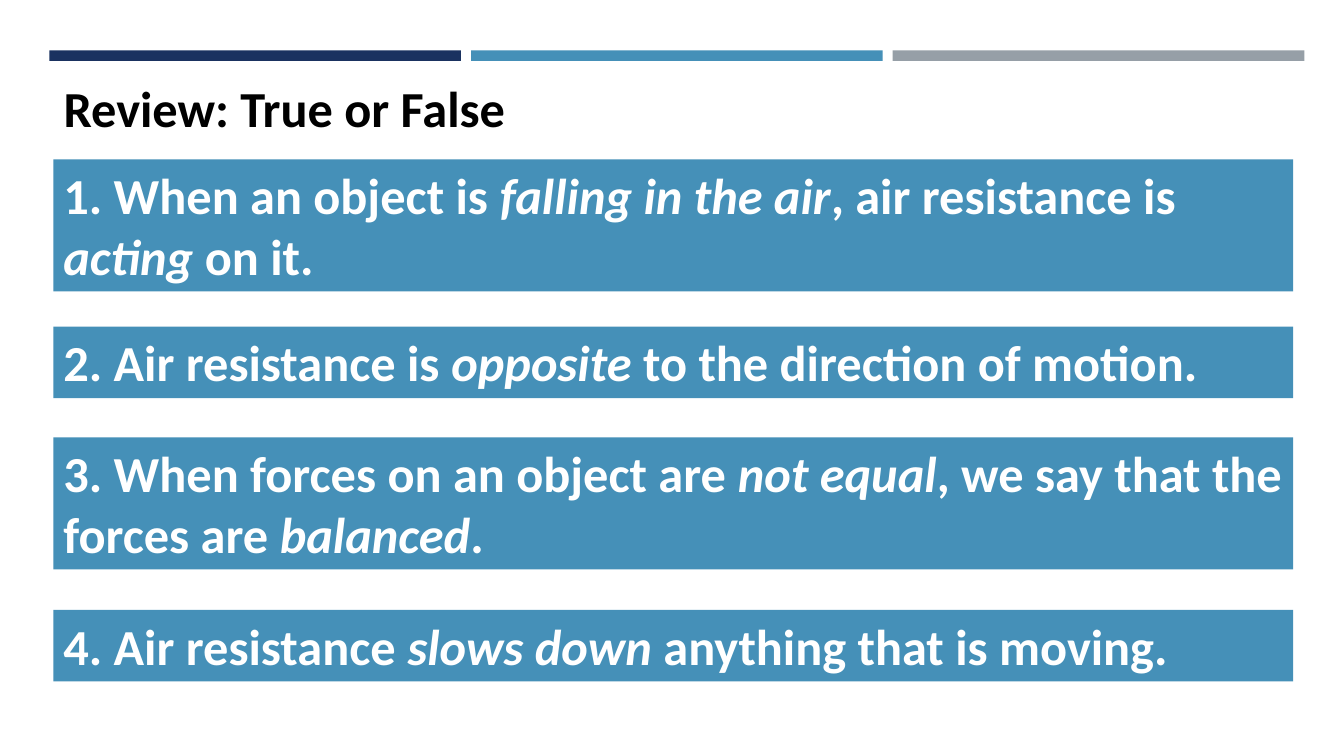
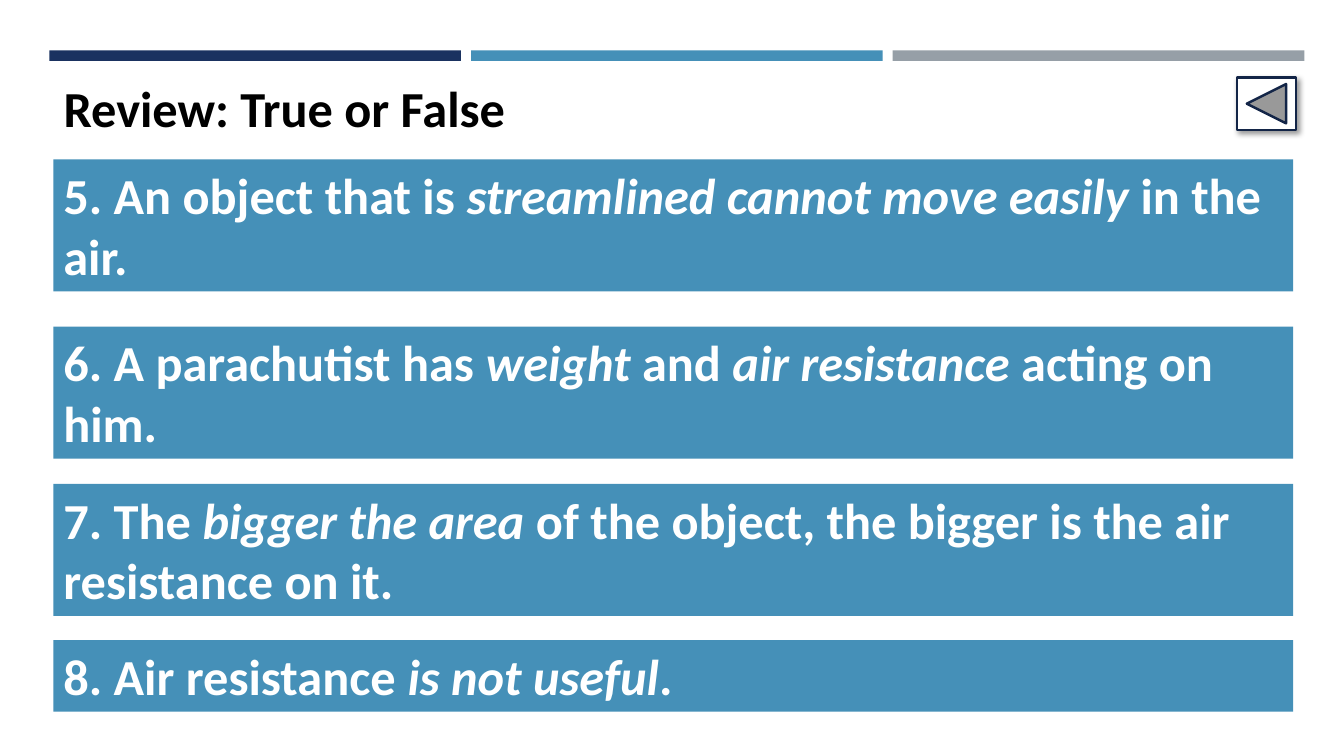
from lxml import etree
from pptx import Presentation
from pptx.dml.color import RGBColor
from pptx.enum.shapes import MSO_SHAPE
from pptx.enum.text import MSO_ANCHOR, MSO_AUTO_SIZE, PP_ALIGN
from pptx.oxml import parse_xml
from pptx.util import Pt

RECT = MSO_SHAPE.RECTANGLE
BACK = MSO_SHAPE.ACTION_BUTTON_BACK_OR_PREVIOUS
TOP, LEFT = MSO_ANCHOR.TOP, PP_ALIGN.LEFT
NO_FIT = MSO_AUTO_SIZE.NONE

# Shared look
NAVY, BLUE, GRAY = "1A3260", "4590B8", "969FA7"
WHITE, BLACK, OUTLINE = "FFFFFF", "000000", "132547"
FONT = {"name": "Calibri", "size": Pt(36), "bold": True}
FRAME = {"word_wrap": True, "auto_size": NO_FIT, "vertical_anchor": TOP,
         "margin_left": Pt(7.2), "margin_right": Pt(7.2),
         "margin_top": Pt(3.6), "margin_bottom": Pt(3.6)}

# Shared geometry, in points
SLIDE_W, SLIDE_H = 960, 540
BANDS_BOX = (35.3, 36, 896.4, 7.6)
BAND_GAP = 7.2
TITLE_BOX = (38.2, 51.8, 885.6, 51.1)
BUTTON_BOX = (883.4, 55.4, 42.5, 37.4)
LINE_H, STATEMENT_PAD = 43.2, 7.9

# Statements: top, number of lines, text with *emphasis*
TITLE = "Review: True or False"
REVIEWS = [
    {"back": False, "statements": [
        (113.8, 2, "1. When an object is *falling in the air*, air resistance is "
                   "*acting* on it."),
        (233.3, 1, "2. Air resistance is *opposite* to the direction of motion."),
        (312.5, 2, "3. When forces on an object are *not equal*, we say that the "
                   "forces are *balanced*."),
        (435.6, 1, "4. Air resistance *slows down *anything that is moving."),
    ]},
    {"back": True, "statements": [
        (113.8, 2, "5. An object that is *streamlined cannot move easily *in the air."),
        (233.3, 2, "6. A parachutist has *weight* and *air resistance *acting on him."),
        (345.6, 2, "7. The *bigger the area *of the object, the bigger is the air "
                   "resistance on it."),
        (457.2, 1, "8. Air resistance *is not useful*."),
    ]},
]

SHADOW = """
<a:outerShdw xmlns:a="http://schemas.openxmlformats.org/drawingml/2006/main"
    blurRad="50800" dist="38100" dir="2700000" algn="tl" rotWithShape="0">
  <a:srgbClr val="000000"><a:alpha val="40000"/></a:srgbClr>
</a:outerShdw>"""


def rgb(code):
    return RGBColor.from_string(code)


def apply(target, values):
    for key, value in values.items():
        setattr(target, key, value)


def add_block(slide, kind, box, fill):
    """A flat filled shape without outline or shadow."""
    block = slide.shapes.add_shape(kind, *map(Pt, box))
    block.shadow.inherit = False
    block.fill.solid()
    block.fill.fore_color.rgb = rgb(fill)
    block.line.fill.background()
    return block


def write(frame, text, color):
    """Write one paragraph; every second part between asterisks is italic."""
    apply(frame, FRAME)
    paragraph = frame.paragraphs[0]
    paragraph.alignment = LEFT
    for index, part in enumerate(text.split("*")):
        run = paragraph.add_run()
        run.text = part
        apply(run.font, {**FONT, "italic": index % 2 == 1})
        run.font.color.rgb = rgb(color)


def add_bands(slide, box):
    """Three equal bands, kept on the layout so that all slides share them."""
    left, top, width, height = box
    colors = (NAVY, BLUE, GRAY)
    band_w = (width - BAND_GAP * (len(colors) - 1)) / len(colors)
    shared = slide.slide_layout.shapes.element
    for index, color in enumerate(colors):
        band_left = left + index * (band_w + BAND_GAP)
        band = add_block(slide, RECT, (band_left, top, band_w, height), color)
        band.element.nvSpPr.cNvPr.set("id", str(101 + index))
        shared.append(band.element)


def add_title(slide, box):
    title = slide.shapes.title
    apply(title, dict(zip(("left", "top", "width", "height"), map(Pt, box))))
    write(title.text_frame, TITLE, BLACK)


def add_statements(slide, box, statements):
    """Statement bars, as wide as the given box and as high as their lines."""
    left, _, width, _ = box
    for top, lines, text in statements:
        bar_h = lines * LINE_H + STATEMENT_PAD
        bar = add_block(slide, RECT, (left, top, width, bar_h), BLUE)
        write(bar.text_frame, text, WHITE)


def add_back_button(slide, box):
    button = add_block(slide, BACK, box, WHITE)
    button.line.color.rgb = rgb(OUTLINE)
    button.line.width = Pt(1.75)
    # Soft shadow to the lower right
    effects = next(button.element.spPr.iter("{*}effectLst"))
    effects.append(parse_xml(etree.tostring(etree.fromstring(SHADOW))))


def add_review_slide(prs, layout, review):
    slide = prs.slides.add_slide(layout)
    add_title(slide, TITLE_BOX)
    add_statements(slide, TITLE_BOX, review["statements"])
    if review["back"]:
        add_back_button(slide, BUTTON_BOX)
    return slide


def main():
    prs = Presentation()
    prs.slide_width, prs.slide_height = Pt(SLIDE_W), Pt(SLIDE_H)
    layout = prs.slide_layouts[5]  # title only
    slides = [add_review_slide(prs, layout, review) for review in REVIEWS]
    add_bands(slides[0], BANDS_BOX)
    prs.save("out.pptx")


if __name__ == "__main__":
    main()
